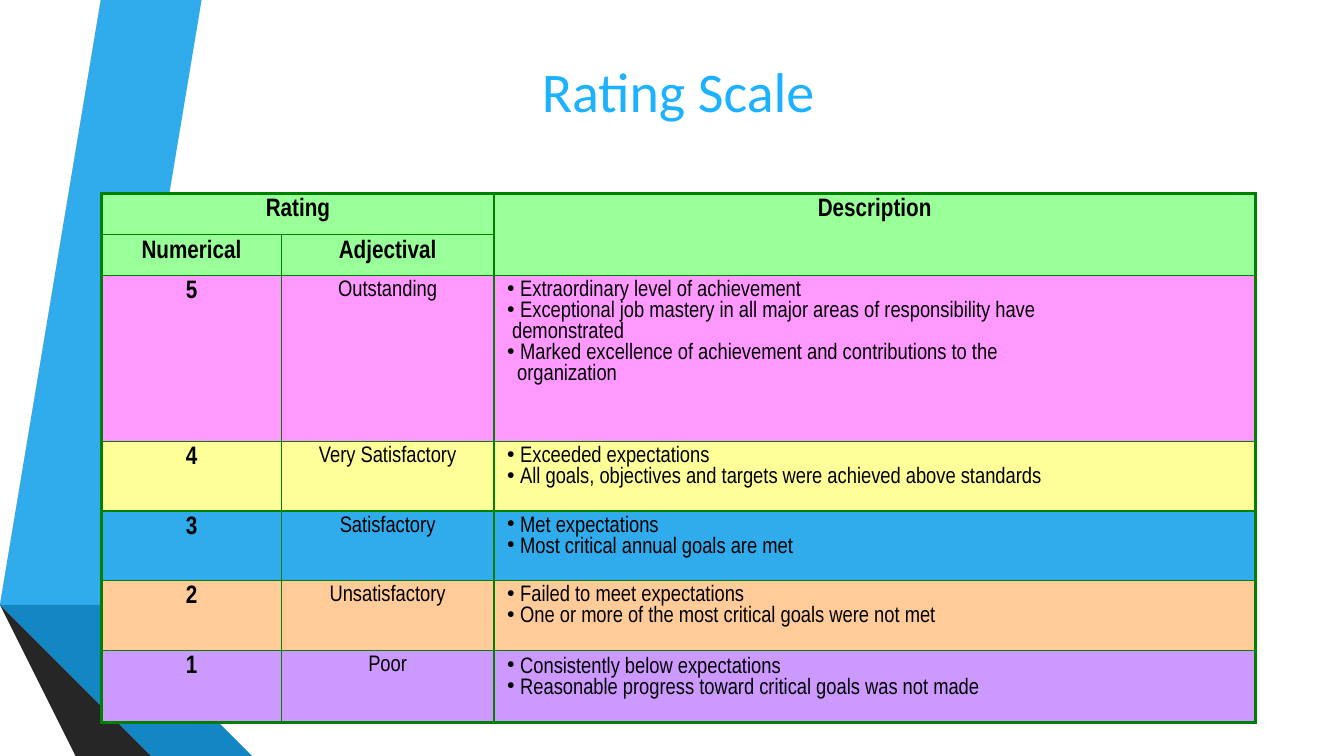
from lxml import etree
from pptx import Presentation
from pptx import util as u
from pptx.dml.color import RGBColor
from pptx.enum import text
from pptx.oxml import ns

BLUE = RGBColor(0x30, 0xAC, 0xEC)
MID_BLUE = RGBColor(0x12, 0x87, 0xC3)
DARK_BLUE = RGBColor(0x0C, 0x5A, 0x82)
GRAY = RGBColor(0x59, 0x59, 0x59)
DARK_GRAY = RGBColor(0x40, 0x40, 0x40)
NEAR_BLACK = RGBColor(0x26, 0x26, 0x26)
TITLE_BLUE = RGBColor(0x1D, 0xB2, 0xFF)
BLACK = RGBColor(0, 0, 0)
GREEN = RGBColor(0x00, 0x80, 0x00)
LIGHT_GREEN = RGBColor(0x99, 0xFF, 0x99)
PINK = RGBColor(0xFF, 0x99, 0xFF)
YELLOW = RGBColor(0xFF, 0xFF, 0x99)
ORANGE = RGBColor(0xFF, 0xCC, 0x99)
PURPLE = RGBColor(0xCC, 0x99, 0xFF)

WIDTH, HEIGHT = 13.33, 7.5
TITLE = "Rating Scale"
HEADERS = [("Rating", "", "Description"), ("Numerical", "Adjectival", "")]
BULLET_INDENT = 0.13
RATINGS = [
    ("5", "Outstanding", PINK, [
        (BULLET_INDENT, "Extraordinary level of achievement"),
        (BULLET_INDENT, "Exceptional job mastery in all major areas of responsibility have"),
        (0.05, "demonstrated"),
        (BULLET_INDENT, "Marked excellence of achievement and contributions to the"),
        (0.1, "organization"),
    ]),
    ("4", "Very Satisfactory", YELLOW, [
        (BULLET_INDENT, "Exceeded expectations"),
        (BULLET_INDENT, "All goals, objectives and targets were achieved above standards"),
    ]),
    ("3", "Satisfactory", BLUE, [
        (BULLET_INDENT, "Met expectations"),
        (BULLET_INDENT, "Most critical annual goals are met"),
    ]),
    ("2", "Unsatisfactory", ORANGE, [
        (BULLET_INDENT, "Failed to meet expectations"),
        (BULLET_INDENT, "One or more of the most critical goals were not met"),
    ]),
    ("1", "Poor", PURPLE, [
        (BULLET_INDENT, "Consistently below expectations"),
        (BULLET_INDENT, "Reasonable progress toward critical goals was not made"),
    ]),
]
COLUMNS = [1.78, 2.11, 7.55]
ROWS = [0.41, 0.4, 1.65, 0.69, 0.69, 0.69, 0.72]
TABLE_LEFT, TABLE_TOP = 1.01, 1.92
RIBBONS = [
    (BLUE, [(0.5, 5.78), (0.77, 5.83), (1.73, 0), (1.45, 0)]),
    (GRAY, [(1.39, 0), (1.11, 0), (0.16, 5.73), (0.44, 5.77)]),
    (NEAR_BLACK, [(0.16, 5.73), (1.45, HEIGHT), (1.51, HEIGHT)]),
    (DARK_BLUE, [(0.5, 5.79), (2.08, HEIGHT), (2.14, HEIGHT)]),
    (MID_BLUE, [(0.5, 5.79), (2.14, HEIGHT), (2.83, HEIGHT), (0.77, 5.83), (0.5, 5.78)]),
    (DARK_GRAY, [(2.02, HEIGHT), (0.48, 5.83), (0.43, 5.78), (0.44, 5.77),
                 (0.16, 5.73), (1.51, HEIGHT)]),
]


def add_ribbon(slide, color, points):
    builder = slide.shapes.build_freeform(*points[0], scale=u.Inches(1))
    builder.add_line_segments(points[1:], close=True)
    shape = builder.convert_to_shape()
    shape.shadow.inherit = False
    shape.fill.solid()
    shape.fill.fore_color.rgb = color
    shape.line.fill.background()


def add_title(slide):
    box = slide.shapes.add_textbox(*map(u.Inches, (0.78, 0.21, 11.89, 1.37)))
    frame = box.text_frame
    frame.word_wrap = True
    frame.vertical_anchor = text.MSO_ANCHOR.MIDDLE
    frame.text = TITLE
    paragraph = frame.paragraphs[0]
    paragraph.alignment = text.PP_ALIGN.CENTER
    format_runs(paragraph, "Calibri", 40, False, TITLE_BLUE)


def format_runs(paragraph, name, size, bold, color):
    for run in paragraph.runs:
        run.font.name = name
        run.font.size = u.Pt(size)
        run.font.bold = bold
        run.font.color.rgb = color


def set_borders(cell, row, column):
    outer = {
        "lnL": column == 0,
        "lnR": column == len(COLUMNS) - 1,
        "lnT": row == 0,
        "lnB": row == len(ROWS) - 1,
    }
    properties = cell._tc.get_or_add_tcPr()
    for edge, is_outer in outer.items():
        line = etree.SubElement(properties, ns.qn(f"a:{edge}"),
                                w=str(u.Pt(2.25 if is_outer else 1)))
        fill = etree.SubElement(line, ns.qn("a:solidFill"))
        etree.SubElement(fill, ns.qn("a:srgbClr"), val=str(GREEN))


def set_cell(cell, lines, size, bold, centered):
    frame = cell.text_frame
    frame.text = "\n".join(line for _, line in lines)
    for paragraph, (indent, _) in zip(frame.paragraphs, lines):
        if centered:
            paragraph.alignment = text.PP_ALIGN.CENTER
        else:
            properties = paragraph._p.get_or_add_pPr()
            bulleted = indent == BULLET_INDENT
            properties.set("marL", str(u.Inches(indent)))
            properties.set("indent", str(u.Inches(-indent if bulleted else 0)))
            if bulleted:
                etree.SubElement(properties, ns.qn("a:buChar"), char="•")
        format_runs(paragraph, "Arial Narrow", size, bold, BLACK)


def add_rating_table(slide):
    frame = slide.shapes.add_table(
        len(ROWS), len(COLUMNS), u.Inches(TABLE_LEFT), u.Inches(TABLE_TOP),
        u.Inches(sum(COLUMNS)), u.Inches(sum(ROWS)))
    table = frame.table
    table.first_row = table.horz_banding = False
    for column, width in zip(table.columns, COLUMNS):
        column.width = u.Inches(width)
    for row, height in zip(table.rows, ROWS):
        row.height = u.Inches(height)

    fills = [LIGHT_GREEN] * len(HEADERS) + [color for _, _, color, _ in RATINGS]
    for row, color in enumerate(fills):
        for column in range(len(COLUMNS)):
            cell = table.cell(row, column)
            cell.margin_left = cell.margin_right = u.Inches(0.13)
            cell.margin_top = cell.margin_bottom = u.Inches(0.05)
            set_borders(cell, row, column)
            cell.fill.solid()
            cell.fill.fore_color.rgb = color
    table.cell(0, 0).merge(table.cell(0, 1))
    table.cell(0, 2).merge(table.cell(1, 2))

    for row, labels in enumerate(HEADERS):
        for column, label in enumerate(labels):
            if label:
                set_cell(table.cell(row, column), [(0, label)], 18, True, True)
    for row, (number, adjective, _, description) in enumerate(RATINGS, len(HEADERS)):
        set_cell(table.cell(row, 0), [(0, number)], 18, True, True)
        set_cell(table.cell(row, 1), [(0, adjective)], 16, False, True)
        set_cell(table.cell(row, 2), description, 16, False, False)
    table.cell(len(ROWS) - 1, 2).margin_top = u.Inches(0.07)


def main():
    presentation = Presentation()
    presentation.slide_width = u.Inches(WIDTH)
    presentation.slide_height = u.Inches(HEIGHT)
    slide = presentation.slides.add_slide(presentation.slide_layouts[6])
    for color, points in RIBBONS:
        add_ribbon(slide, color, points)
    add_title(slide)
    add_rating_table(slide)
    presentation.save("out.pptx")


if __name__ == "__main__":
    main()
